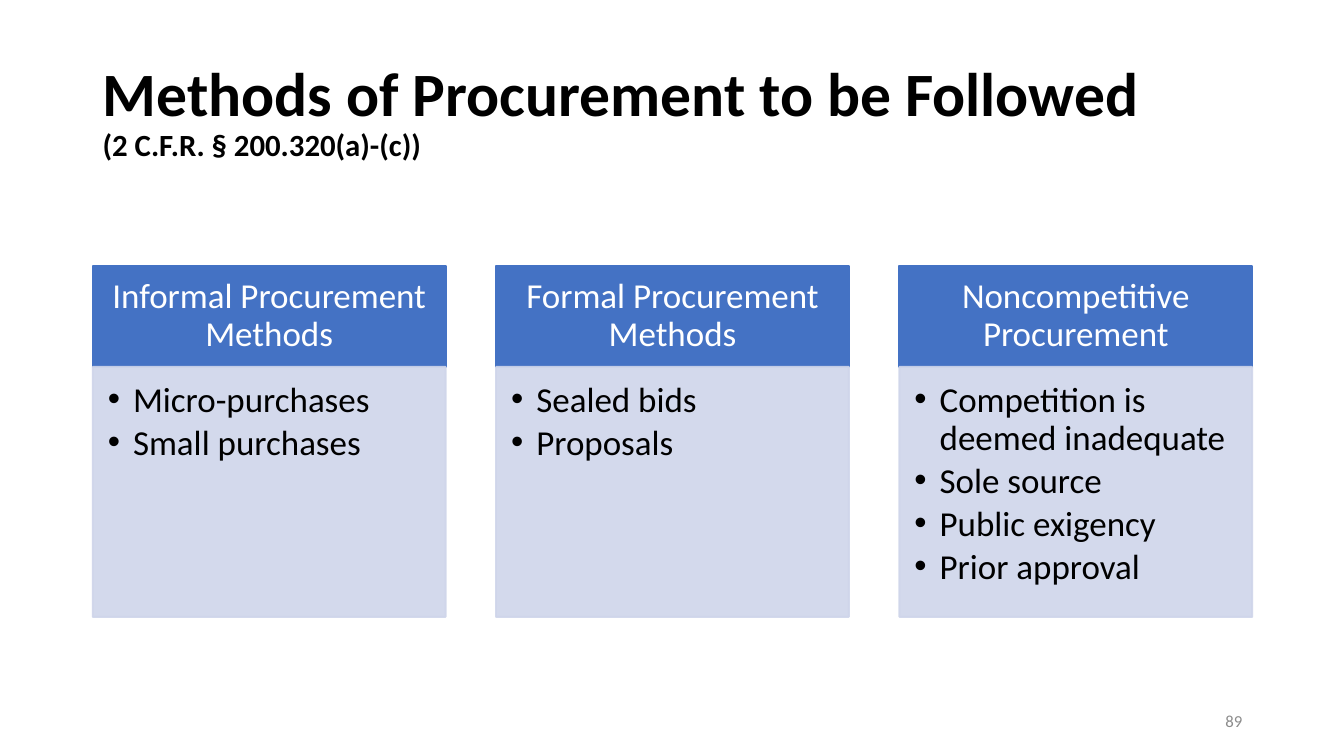
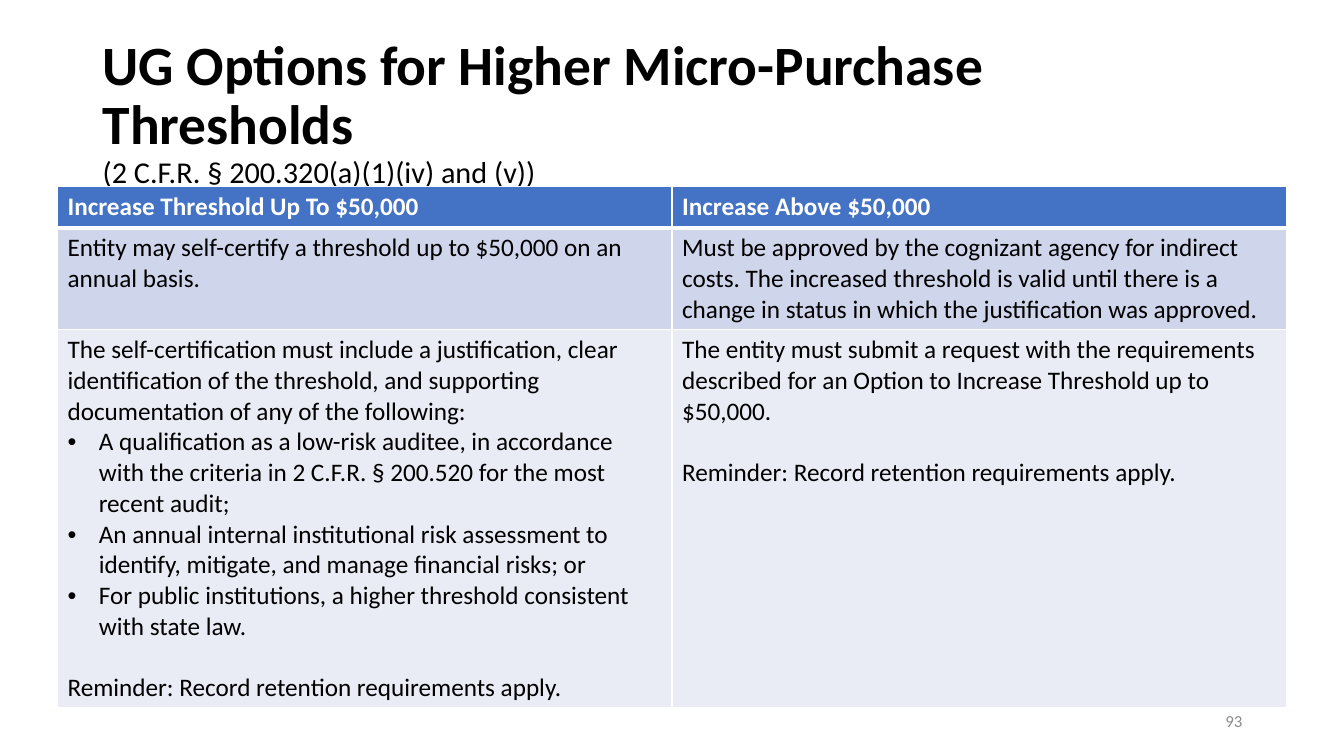
from lxml import etree
from pptx import Presentation
from pptx.dml.color import RGBColor
from pptx.enum import shapes, text
from pptx.oxml import ns
from pptx.util import Inches, Pt

FONT = "Calibri"
COLORS = {"ink": "000000", "white": "FFFFFF", "blue": "4472C4", "tint": "CFD5EA",
          "pale": "E9EBF5", "grey": "8C8C8C"}
SLIDE_W, SLIDE_H = 13.33, 7.5
MARGIN, CONTENT_W = 0.92, 11.5
TITLE_BOX = (MARGIN, 0.4, CONTENT_W, 1.45)
NUMBER_BOX = (9.42, 6.95, 3, 0.4)
CARDS_BOX = (MARGIN, 2.64, CONTENT_W, 3.48)
TABLE_BOX = (0.57, 1.85, 12.19, 5.17)

CARDS = [
    ("Informal Procurement Methods", ["Micro-purchases", "Small purchases"]),
    ("Formal Procurement Methods", ["Sealed bids", "Proposals"]),
    ("Noncompetitive Procurement",
     ["Competition is deemed inadequate", "Sole source", "Public exigency", "Prior approval"]),
]
REMINDER = ("gap", "Reminder: Record retention requirements apply.")
THRESHOLDS = [
    [[("plain", "Increase Threshold Up To $50,000")],
     [("plain", "Increase Above $50,000")]],
    [[("plain", "Entity may self-certify a threshold up to $50,000 on an annual basis.")],
     [("plain", "Must be approved by the cognizant agency for indirect costs. The increased "
                "threshold is valid until there is a change in status in which the "
                "justification was approved.")]],
    [[("plain", "The self-certification must include a justification, clear identification of "
                "the threshold, and supporting documentation of any of the following:"),
      ("bullet", "A qualification as a low-risk auditee, in accordance with the criteria in "
                 "2 C.F.R. § 200.520 for the most recent audit;"),
      ("bullet", "An annual internal institutional risk assessment to identify, mitigate, "
                 "and manage financial risks; or"),
      ("bullet", "For public institutions, a higher threshold consistent with state law."),
      REMINDER],
     [("plain", "The entity must submit a request with the requirements described for an "
                "Option to Increase Threshold up to $50,000."),
      REMINDER]],
]


def rgb(name):
    """Return a palette colour."""
    return RGBColor.from_string(COLORS[name])


def inches(*values):
    """Convert a series of lengths in inches."""
    return [Inches(v) for v in values]


def style(r, size, color="ink", bold=False):
    """Format one run."""
    r.font.name, r.font.size, r.font.bold = FONT, Pt(size), bold
    r.font.color.rgb = rgb(color)


def add_bullet(p, indent):
    """Give a paragraph a hanging bullet."""
    props = p._p.get_or_add_pPr()
    props.set("marL", str(Inches(indent)))
    props.set("indent", str(-Inches(indent)))
    etree.SubElement(props, ns.qn("a:buFont"), typeface="Arial")
    etree.SubElement(props, ns.qn("a:buChar"), char="•")


def add_box(s, box, anchor):
    """Add a wrapping text box and return its frame."""
    tf = s.shapes.add_textbox(*inches(*box)).text_frame
    tf.word_wrap, tf.vertical_anchor = True, anchor
    return tf


def add_base(prs, title, citation, number, size, cite_size, cite_bold):
    """Add a slide with its title, citation and page number."""
    s = prs.slides.add_slide(prs.slide_layouts[6])
    p = add_box(s, TITLE_BOX, text.MSO_ANCHOR.MIDDLE).paragraphs[0]
    p.text = f"{title}\v{citation}"
    p.line_spacing = 0.9
    style(p.runs[0], size, bold=True)
    style(p.runs[1], cite_size, bold=cite_bold)
    p = add_box(s, NUMBER_BOX, text.MSO_ANCHOR.MIDDLE).paragraphs[0]
    p.text, p.alignment = str(number), text.PP_ALIGN.RIGHT
    style(p.runs[0], 12, "grey")
    return s


def add_panel(s, box, color, insets, anchor, opacity=100):
    """Add a filled rectangle and return its text frame."""
    sp = s.shapes.add_shape(shapes.MSO_SHAPE.RECTANGLE, *inches(*box))
    sp.shadow.inherit = False
    sp.fill.solid()
    sp.fill.fore_color.rgb = sp.line.color.rgb = rgb(color)
    sp.line.width = Pt(1.35)
    if opacity < 100:
        for clr in sp._element.spPr.iter(ns.qn("a:srgbClr")):
            etree.SubElement(clr, ns.qn("a:alpha"), val=str(opacity * 1000))
    tf = sp.text_frame
    tf.word_wrap, tf.vertical_anchor = True, anchor
    tf.margin_left, tf.margin_top, tf.margin_right, tf.margin_bottom = inches(*insets)
    return tf


def add_card(s, box, heading, items):
    """Add a heading panel above a panel of bullets."""
    x, y, w, h = box
    head_h = 1
    tf = add_panel(s, (x, y, w, head_h), "blue", (0.19, 0.11, 0.19, 0.11),
                   text.MSO_ANCHOR.MIDDLE)
    tf.text = heading
    p = tf.paragraphs[0]
    p.alignment, p.line_spacing = text.PP_ALIGN.CENTER, 0.9
    style(p.runs[0], 25, "white")
    tf = add_panel(s, (x, y + head_h, w, h - head_h), "tint", (0.15, 0.15, 0.19, 0.22),
                   text.MSO_ANCHOR.TOP, opacity=90)
    tf.text = "\n".join(items)
    for p in tf.paragraphs:
        p.alignment, p.line_spacing, p.space_after = text.PP_ALIGN.LEFT, 0.9, Pt(3.75)
        add_bullet(p, 0.25)
        style(p.runs[0], 25)


def add_cards(s, box, cards, gap=0.5):
    """Spread cards evenly across a box."""
    x, y, w, h = box
    card_w = (w - gap * (len(cards) - 1)) / len(cards)
    for i, (heading, items) in enumerate(cards):
        add_card(s, (x + i * (card_w + gap), y, card_w, h), heading, items)


def add_borders(cell, **widths):
    """Draw white cell borders of the given widths."""
    props = cell._tc.get_or_add_tcPr()
    for side in "LRTB":
        ln = etree.SubElement(props, ns.qn(f"a:ln{side}"), w=str(Pt(widths.get(side, 1))))
        fill = etree.SubElement(ln, ns.qn("a:solidFill"))
        etree.SubElement(fill, ns.qn("a:srgbClr"), val=COLORS["white"])


def fill_cell(cell, paragraphs, color, bold):
    """Write the paragraphs of one table cell."""
    tf = cell.text_frame
    tf.text = "\n".join(words for _, words in paragraphs)
    for p, (kind, _) in zip(tf.paragraphs, paragraphs):
        style(p.runs[0], 18, color, bold)
        if kind == "bullet":
            add_bullet(p, 0.31)
        elif kind == "gap":
            p.space_before = Pt(22)


def add_thresholds(s, box, rows):
    """Add the two-column comparison table."""
    table = s.shapes.add_table(len(rows), len(rows[0]), *inches(*box)).table
    heights = (0.41, 1.01, box[3] - 1.42)
    fills = ("blue", "tint", "pale")
    borders = ({"B": 3}, {"T": 3}, {})
    for i, row in enumerate(rows):
        table.rows[i].height = Inches(heights[i])
        for j, paragraphs in enumerate(row):
            cell = table.cell(i, j)
            add_borders(cell, **borders[i])
            cell.fill.solid()
            cell.fill.fore_color.rgb = rgb(fills[i])
            fill_cell(cell, paragraphs, "ink" if i else "white", i == 0)


def main():
    """Build and save the slides."""
    prs = Presentation()
    prs.slide_width, prs.slide_height = inches(SLIDE_W, SLIDE_H)
    s = add_base(prs, "Methods of Procurement to be Followed", "(2 C.F.R. § 200.320(a)-(c))",
                 89, 44, 22, True)
    add_cards(s, CARDS_BOX, CARDS)
    s = add_base(prs, "UG Options for Higher Micro-Purchase Thresholds",
                 "(2 C.F.R. § 200.320(a)(1)(iv) and (v))", 93, 39.6, 21.6, False)
    add_thresholds(s, TABLE_BOX, THRESHOLDS)
    prs.save("out.pptx")


if __name__ == "__main__":
    main()
